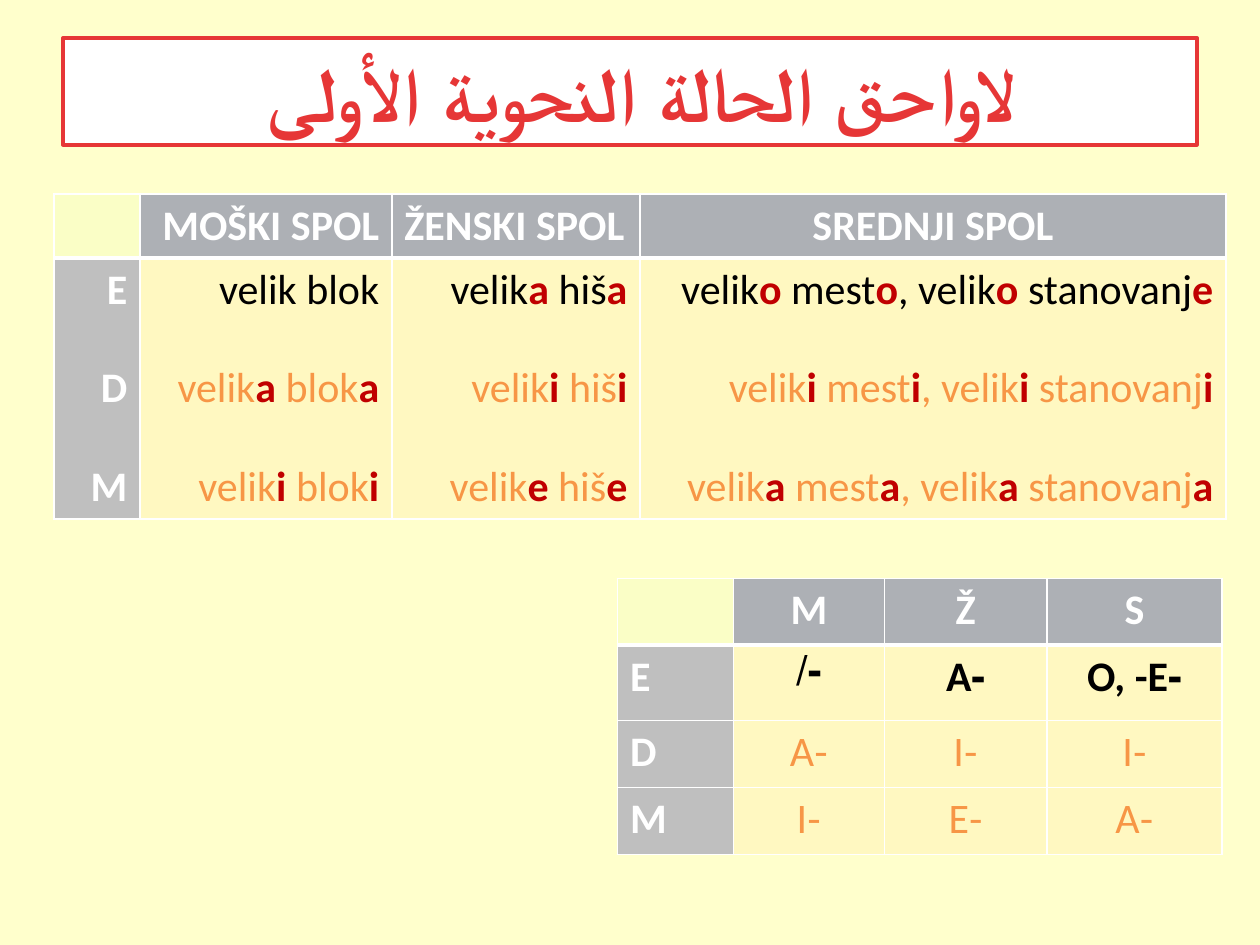
import pptx
import pptx.dml.color
import pptx.enum.shapes
import pptx.enum.text
import pptx.oxml
import pptx.oxml.ns
import pptx.util
from pptx.util import Inches

FONT = "Calibri"
WHITE, BLACK, RED = "FFFFFF", "000000", "E63636"
ORANGE, ENDING = "F79646", "C00000"
CORNER, HEADER, LABEL, BODY = "FAFEC6", "ADB0B5", "BFBFBF", "FFF8C1"
LEFT = None
CENTER = pptx.enum.text.PP_ALIGN.CENTER
RIGHT = pptx.enum.text.PP_ALIGN.RIGHT

HEADINGS = [("MOŠKI SPOL", RIGHT), ("ŽENSKI SPOL", LEFT), ("SREDNJI SPOL", CENTER)]
NUMBERS = ["E", "D", "M"]
EXAMPLES = [
    ["velik blok", "velik*a* blok*a*", "velik*i* blok*i*"],
    ["velik*a* hiš*a*", "velik*i* hiš*i*", "velik*e* hiš*e*"],
    ["velik*o* mest*o*, velik*o* stanovanj*e*",
     "velik*i* mest*i*, velik*i* stanovanj*i*",
     "velik*a* mest*a*, velik*a* stanovanj*a*"],
]
GENDERS = ["M", "Ž", "S"]
SUFFIXES = [["-/", "-A", "-O, -E"], ["-A", "-I", "-I"], ["-I", "-E", "-A"]]


def color(value):
    return pptx.dml.color.RGBColor.from_string(value)


def paint(fill, value):
    fill.solid()
    fill.fore_color.rgb = color(value)


def add_run(paragraph, text, value, bold, size=24):
    run = paragraph.add_run()
    run.text = text
    run.font.name = FONT
    run.font.size = pptx.util.Pt(size)
    run.font.bold = bold
    run.font.color.rgb = color(value)


def align(paragraph, alignment, right_to_left=True):
    paragraph.alignment = alignment
    if right_to_left:
        paragraph._p.get_or_add_pPr().set("rtl", "1")


def write_lines(cell, lines, colors, bold, alignment, right_to_left=True):
    frame = cell.text_frame
    for index, (line, value) in enumerate(zip(lines, colors)):
        paragraph = frame.add_paragraph() if index else frame.paragraphs[0]
        align(paragraph, alignment, right_to_left)
        if index:
            paragraph.space_before = pptx.util.Pt(27)
        for position, part in enumerate(line.split("*")):
            is_ending = position % 2 == 1
            if part:
                add_run(paragraph, part, ENDING if is_ending else value, bold or is_ending)


def set_borders(cell, row):
    widths = {"L": 0.96, "R": 0.96,
              "T": 3 if row == 1 else 0.96, "B": 3 if row == 0 else 0.96}
    properties = cell._tc.get_or_add_tcPr()
    for side, width in widths.items():
        properties.append(pptx.oxml.parse_xml(
            f'<a:ln{side} {pptx.oxml.ns.nsdecls("a")} w="{pptx.util.Pt(width)}">'
            f'<a:solidFill><a:srgbClr val="{WHITE}"/></a:solidFill></a:ln{side}>'))


def add_grid(slide, left, top, widths, heights):
    table = slide.shapes.add_table(
        len(heights), len(widths), Inches(left), Inches(top),
        Inches(sum(widths)), Inches(sum(heights))).table
    table.horz_banding = False
    for column, width in zip(table.columns, widths):
        column.width = Inches(width)
    for row, height in zip(table.rows, heights):
        row.height = Inches(height)
    for row in range(len(heights)):
        for column in range(len(widths)):
            cell = table.cell(row, column)
            set_borders(cell, row)
            if row == 0:
                paint(cell.fill, HEADER if column else CORNER)
            else:
                paint(cell.fill, BODY if column else LABEL)
    return table


def add_title(slide, text):
    shape = slide.shapes.add_shape(
        pptx.enum.shapes.MSO_SHAPE.RECTANGLE,
        Inches(0.5), Inches(0.3), Inches(9), Inches(0.85))
    shape.shadow.inherit = False
    paint(shape.fill, WHITE)
    shape.line.color.rgb = color(RED)
    shape.line.width = pptx.util.Pt(2)
    paragraph = shape.text_frame.paragraphs[0]
    align(paragraph, CENTER)
    add_run(paragraph, text, RED, True, 44)


def add_examples(slide):
    table = add_grid(slide, 0.43, 1.54, [0.68, 2, 1.97, 4.65], [0.43, 1.77])
    write_lines(table.cell(1, 0), NUMBERS, [WHITE] * 3, True, RIGHT)
    for column, ((heading, alignment), lines) in enumerate(zip(HEADINGS, EXAMPLES), 1):
        write_lines(table.cell(0, column), [heading], [WHITE], True, alignment,
                    alignment is not LEFT)
        write_lines(table.cell(1, column), lines, [BLACK, ORANGE, ORANGE], False, RIGHT)


def add_suffixes(slide):
    table = add_grid(slide, 4.9, 4.59, [0.92, 1.2, 1.29, 1.39], [0.53, 0.6, 0.53, 0.53])
    for column, gender in enumerate(GENDERS, 1):
        write_lines(table.cell(0, column), [gender], [WHITE], True, CENTER)
    for row, (number, suffixes) in enumerate(zip(NUMBERS, SUFFIXES), 1):
        write_lines(table.cell(row, 0), [number], [WHITE], True, LEFT)
        singular = row == 1
        for column, suffix in enumerate(suffixes, 1):
            write_lines(table.cell(row, column), [suffix],
                        [BLACK if singular else ORANGE], singular, CENTER)


def main():
    presentation = pptx.Presentation()
    presentation.slide_width = Inches(10)
    presentation.slide_height = Inches(7.5)
    slide = presentation.slides.add_slide(presentation.slide_layouts[6])
    paint(slide.background.fill, "FFFFCC")
    add_title(slide, "لاواحق الحالة النحوية الأولى ")
    add_examples(slide)
    add_suffixes(slide)
    presentation.save("out.pptx")


if __name__ == "__main__":
    main()
